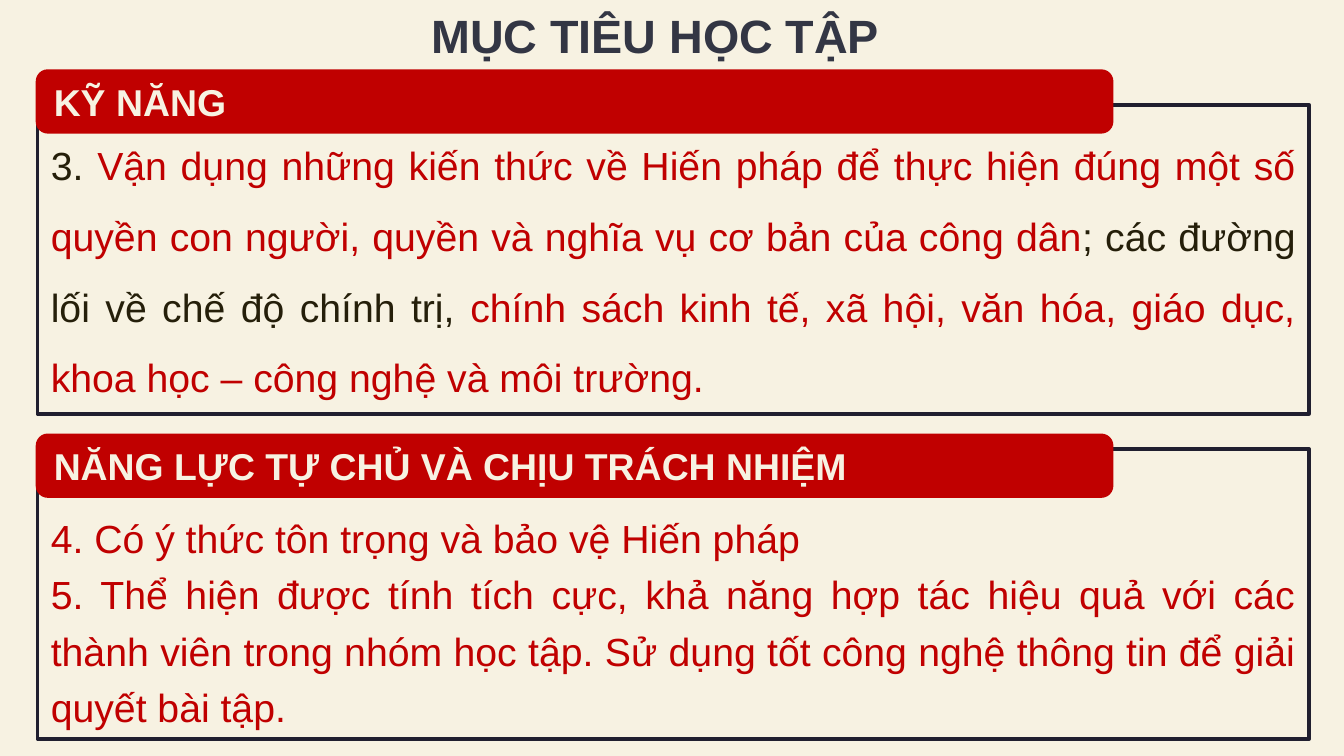
from dataclasses import dataclass

import pptx
import pptx.dml.color
import pptx.enum.shapes
import pptx.enum.text
import pptx.util

Inches = pptx.util.Inches
Align = pptx.enum.text.PP_ALIGN
Anchor = pptx.enum.text.MSO_ANCHOR
ShapeKind = pptx.enum.shapes.MSO_SHAPE


@dataclass(frozen=True)
class Theme:
    font: str = "Arial"
    background: str = "F7F2E2"
    title: str = "333644"
    border: str = "201F2F"
    body: str = "251F0A"
    accent: str = "C00000"
    title_size: float = 25
    heading_size: float = 20
    body_size: float = 21
    line_width: float = 2


THEME = Theme()


@dataclass(frozen=True)
class Box:
    left: float
    top: float
    width: float
    height: float


@dataclass(frozen=True)
class Run:
    text: str
    color: str = THEME.accent


@dataclass(frozen=True)
class Section:
    heading: str
    heading_top: float
    panel_top: float
    panel_height: float
    line_spacing: float
    top_inset: float
    paragraphs: tuple[tuple[Run, ...], ...]


SLIDE_WIDTH = 10
SLIDE_HEIGHT = SLIDE_WIDTH * 9 / 16
LEFT = 0.28
PANEL_WIDTH = 9.46
HEADING_WIDTH = 7.99
HEADING_HEIGHT = 0.45

SECTIONS = (
    Section(
        "KỸ NĂNG", 0.53, 0.78, 2.3, 1.5, 0.05,
        ((
            Run("3. ", THEME.body),
            Run("Vận dụng những kiến thức về Hiến pháp để thực hiện đúng một số "
                "quyền con người, quyền và nghĩa vụ cơ bản của công dân"),
            Run("; các đường lối về chế độ chính trị, ", THEME.body),
            Run("chính sách kinh tế, xã hội, văn hóa, giáo dục, "
                "khoa học – công nghệ và môi trường."),
        ),),
    ),
    Section(
        "NĂNG LỰC TỰ CHỦ VÀ CHỊU TRÁCH NHIỆM", 3.24, 3.34, 2.16, 1.2, 0.4,
        (
            (Run("4. Có ý thức tôn trọng và bảo vệ Hiến pháp"),),
            (Run("5. Thể hiện được tính tích cực, khả năng hợp tác hiệu quả với các "
                 "thành viên trong nhóm học tập. Sử dụng tốt công nghệ thông tin "
                 "để giải quyết bài tập."),),
        ),
    ),
)


def rgb(color: str) -> pptx.dml.color.RGBColor:
    return pptx.dml.color.RGBColor.from_string(color)


def write_text(shape, paragraphs: tuple[tuple[Run, ...], ...], *, size: float,
               bold: bool = False, align=Align.LEFT, anchor=Anchor.MIDDLE,
               line_spacing: float = 1.0, inset: float = 0.1,
               top_inset: float = 0.05, bottom_inset: float = 0.05) -> None:
    frame = shape.text_frame
    frame.word_wrap = True
    frame.auto_size = pptx.enum.text.MSO_AUTO_SIZE.NONE
    frame.vertical_anchor = anchor
    frame.margin_left = frame.margin_right = Inches(inset)
    frame.margin_top = Inches(top_inset)
    frame.margin_bottom = Inches(bottom_inset)
    for index, runs in enumerate(paragraphs):
        paragraph = frame.add_paragraph() if index else frame.paragraphs[0]
        paragraph.alignment = align
        paragraph.line_spacing = line_spacing
        for item in runs:
            run = paragraph.add_run()
            run.text = item.text
            run.font.name = THEME.font
            run.font.size = pptx.util.Pt(size)
            run.font.bold = bold
            run.font.color.rgb = rgb(item.color)


def place(shape, box: Box) -> None:
    shape.left, shape.top = Inches(box.left), Inches(box.top)
    shape.width, shape.height = Inches(box.width), Inches(box.height)


def add_box(slide, kind, box: Box, fill: str, line: str):
    shape = slide.shapes.add_shape(
        kind, Inches(box.left), Inches(box.top), Inches(box.width), Inches(box.height))
    shape.shadow.inherit = False
    shape.fill.solid()
    shape.fill.fore_color.rgb = rgb(fill)
    shape.line.color.rgb = rgb(line)
    shape.line.width = pptx.util.Pt(THEME.line_width)
    return shape


def add_section(slide, section: Section) -> None:
    panel = add_box(
        slide, ShapeKind.RECTANGLE,
        Box(LEFT, section.panel_top, PANEL_WIDTH, section.panel_height),
        THEME.background, THEME.border)
    write_text(panel, section.paragraphs, size=THEME.body_size, align=Align.JUSTIFY,
               line_spacing=section.line_spacing, top_inset=section.top_inset)
    heading = add_box(
        slide, ShapeKind.ROUNDED_RECTANGLE,
        Box(LEFT, section.heading_top, HEADING_WIDTH, HEADING_HEIGHT),
        THEME.accent, THEME.accent)
    write_text(heading, ((Run(section.heading, THEME.background),),),
               size=THEME.heading_size, bold=True)


def main() -> None:
    presentation = pptx.Presentation()
    presentation.slide_width = Inches(SLIDE_WIDTH)
    presentation.slide_height = Inches(SLIDE_HEIGHT)
    slide = presentation.slides.add_slide(presentation.slide_layouts[5])
    slide.background.fill.solid()
    slide.background.fill.fore_color.rgb = rgb(THEME.background)

    title = slide.shapes.title
    place(title, Box(1.22, -0.05, 7.31, 0.58))
    write_text(title, ((Run("MỤC TIÊU HỌC TẬP", THEME.title),),),
               size=THEME.title_size, bold=True, align=Align.CENTER,
               anchor=Anchor.TOP, top_inset=0.1, bottom_inset=0.1)

    for section in SECTIONS:
        add_section(slide, section)
    presentation.save("out.pptx")


if __name__ == "__main__":
    main()
